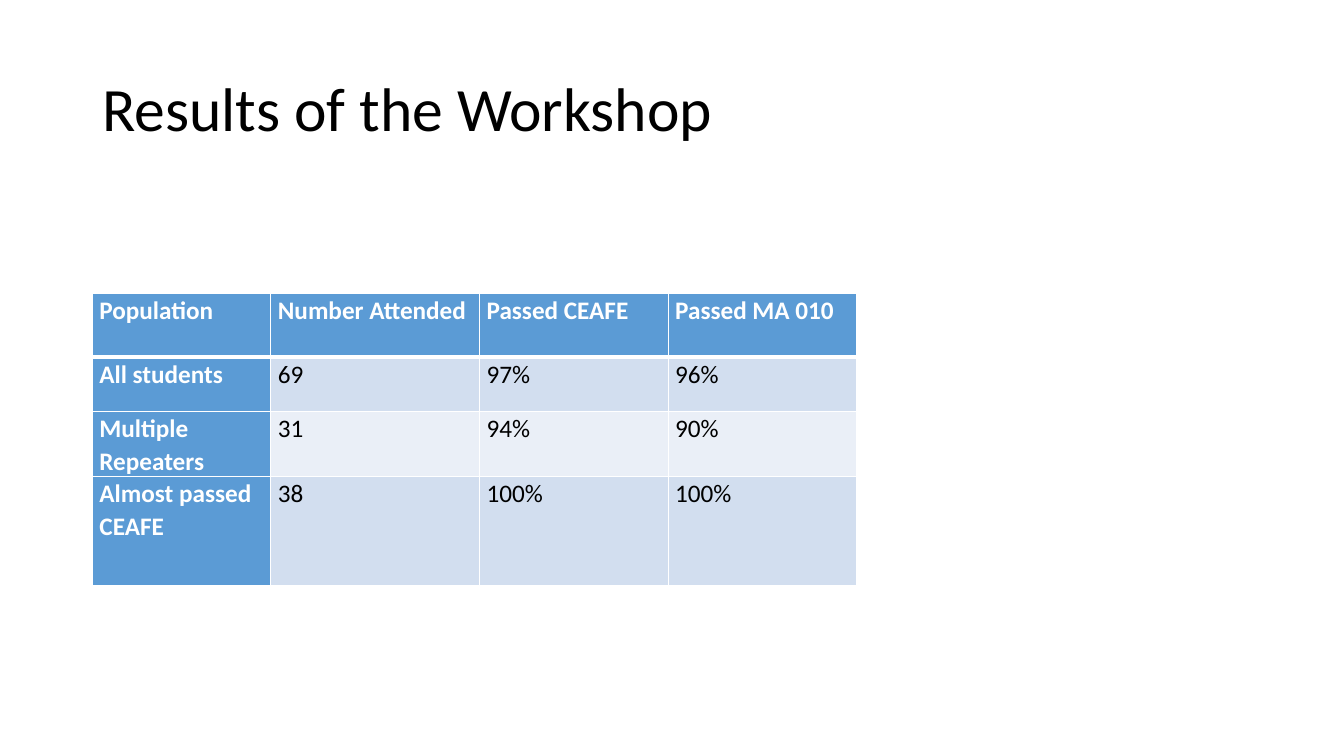
import pptx
import pptx.util
import pptx.dml.color
import pptx.enum.text
import pptx.oxml
import pptx.oxml.ns

BLUE, PALE, LIGHT = "5B9BD5", "D2DEEF", "EAEFF7"
WHITE, BLACK = "FFFFFF", "000000"


def tint(code):
    return pptx.dml.color.RGBColor.from_string(code)


class Deck:
    """Hold the style and current slide, placing items on a 160 by 90 grid."""

    def __init__(self):
        self.font = "Calibri"
        self.show = pptx.Presentation()
        self.show.slide_width = pptx.util.Inches(13.33)
        self.show.slide_height = pptx.util.Inches(7.5)
        self.page = self.show.slides.add_slide(self.show.slide_layouts[6])

    def col(self, count):
        return round(self.show.slide_width * count / 160)

    def row(self, count):
        return round(self.show.slide_height * count / 90)

    def label(self, frame, text, size, color, bold, space):
        line = frame.paragraphs[0]
        line.line_spacing = space
        run = line.add_run()
        run.text = text
        run.font.name = self.font
        run.font.size = pptx.util.Pt(size)
        run.font.bold = bold
        run.font.color.rgb = tint(color)

    def title(self, text, left, top, width, height):
        box = self.page.shapes.add_textbox(
            self.col(left), self.row(top), self.col(width), self.row(height))
        frame = box.text_frame
        frame.word_wrap = True
        frame.vertical_anchor = pptx.enum.text.MSO_ANCHOR.MIDDLE
        self.label(frame, text, 44, BLACK, False, 0.9)

    def edge(self, cell, side, points):
        width = pptx.util.Pt(points)
        space = pptx.oxml.ns.nsdecls("a")
        cell._tc.get_or_add_tcPr().append(pptx.oxml.parse_xml(
            f'<a:ln{side} {space} w="{width}"><a:solidFill>'
            f'<a:srgbClr val="{WHITE}"/></a:solidFill></a:ln{side}>'))

    def cell(self, cell, text, fill, head, sides):
        cell.margin_left = cell.margin_right = pptx.util.Inches(0.07)
        cell.margin_top = cell.margin_bottom = 0
        for side, points in sides.items():
            self.edge(cell, side, points)
        cell.fill.solid()
        cell.fill.fore_color.rgb = tint(fill)
        self.label(cell.text_frame, text, 18, WHITE if head else BLACK, head, 1.07)

    def table(self, data, left, top, widths, height, shares):
        grid = self.page.shapes.add_table(
            len(data), len(widths), self.col(left), self.row(top),
            self.col(sum(widths)), self.row(height)).table
        grid.first_row = grid.horz_banding = False
        for column, width in zip(grid.columns, widths):
            column.width = self.col(width)
        for r, texts in enumerate(data):
            grid.rows[r].height = self.row(height * shares[r] / sum(shares))
            sides = {"L": 1, "R": 1, "T": 3 if r == 1 else 1, "B": 3 if r == 0 else 1}
            for c, text in enumerate(texts):
                head = r == 0 or c == 0
                fill = BLUE if head else PALE if r % 2 else LIGHT
                self.cell(grid.cell(r, c), text, fill, head, sides)


def main():
    deck = Deck()
    deck.title("Results of the Workshop", 11, 4.3, 96.25, 17.9)
    results = [
        ["Population", "Number Attended", "Passed CEAFE", "Passed MA 010"],
        ["All students", "69", "97%", "96%"],
        ["Multiple Repeaters", "31", "94%", "90%"],
        ["Almost passed CEAFE", "38", "100%", "100%"],
    ]
    deck.table(results, 11, 34.95, [21.25, 24.85, 22.45, 22.45], 34.6, [7, 6, 7, 12])
    deck.show.save("out.pptx")


if __name__ == "__main__":
    main()
